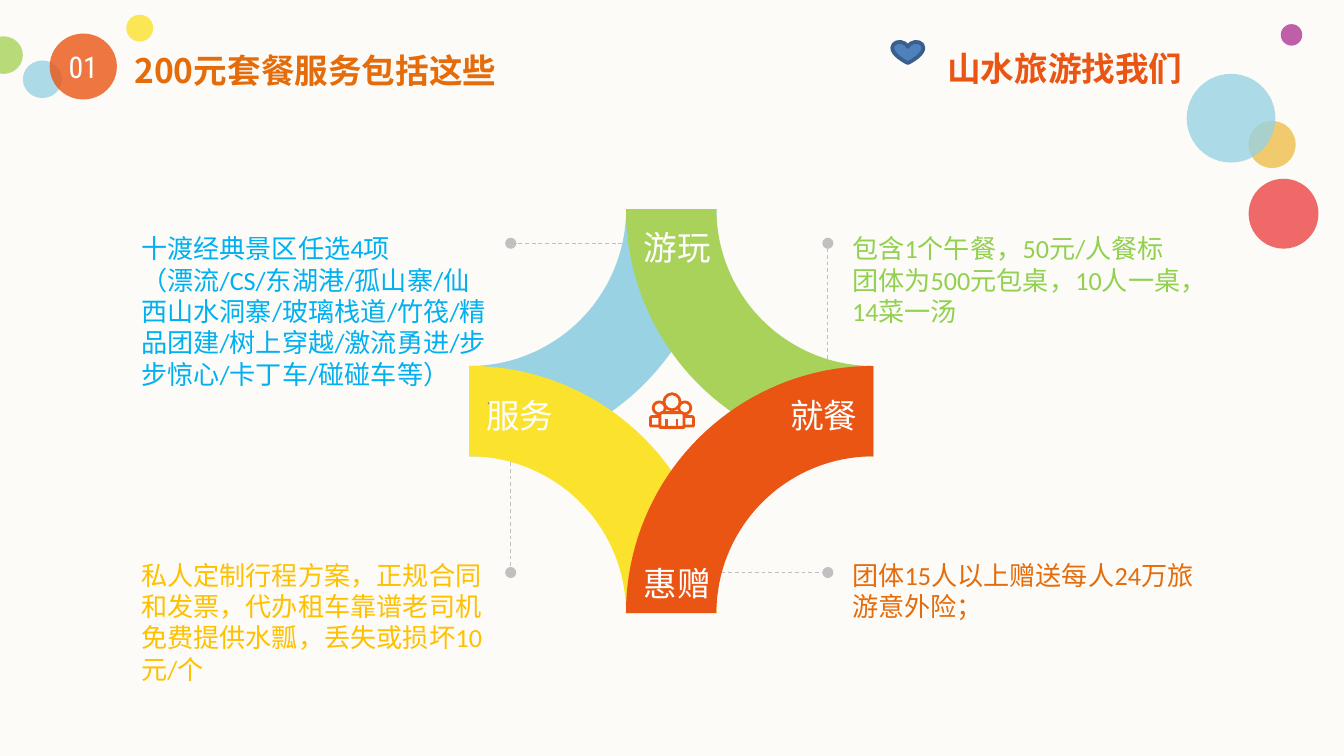
from dataclasses import dataclass
from math import cos, pi, sin

from pptx import Presentation
from pptx.dml.color import RGBColor
from pptx.enum.dml import MSO_LINE
from pptx.enum.shapes import MSO_CONNECTOR, MSO_SHAPE
from pptx.enum.text import MSO_AUTO_SIZE, PP_ALIGN
from pptx.oxml.ns import qn
from pptx.util import Emu, Inches, Pt
from lxml.etree import SubElement

COLS, ROWS = 100, 56.25
HUES = {
    "paper": "FCFBF7", "blue": "98D2E3", "yellow": "FBE22D",
    "green": "A9D25A", "red": "EA5514", "purple": "B03896",
    "sand": "F0CA6C", "rose": "EB4544", "grey": "C0C0C0",
    "white": "FFFFFF", "sky": "00B0F0", "lime": "92D050",
    "amber": "FFC000", "orange": "E46C0A", "dim": "7F7F7F",
    "heart": "4F81BD", "edge": "3A5F8C",
}

deck = Presentation()
deck.slide_width = Inches(10)
deck.slide_height = Inches(5.625)
slide = deck.slides.add_slide(deck.slide_layouts[6])


@dataclass
class Box:
    col: float
    row: float
    wide: float
    high: float


@dataclass
class Petal:
    side: int
    level: int
    hue: str


@dataclass
class Dot:
    box: Box
    hue: str
    alpha: int = 80


@dataclass
class Wire:
    col: float
    row: float
    end_col: float
    end_row: float


@dataclass
class Note:
    box: Box
    hue: str
    lines: list[str]


@dataclass
class Label:
    col: float
    row: float
    word: str


def span(cells: float) -> Emu:
    return Emu(round(deck.slide_width * cells / COLS))


def tint(name: str) -> RGBColor:
    return RGBColor.from_string(HUES[name])


def place(box: Box) -> list[Emu]:
    return [span(n) for n in (box.col, box.row, box.wide, box.high)]


def draw_shape(kind: MSO_SHAPE, box: Box, fill: str, edge: str = "",
               weight: float = 1, alpha: int = 100) -> None:
    shape = slide.shapes.add_shape(kind, *place(box))
    shape.shadow.inherit = False
    shape.fill.solid()
    shape.fill.fore_color.rgb = tint(fill)
    if alpha < 100:
        clr = shape.fill._xPr.find(qn("a:solidFill"))[0]
        SubElement(clr, qn("a:alpha")).set("val", str(alpha * 1000))
    if edge:
        shape.line.color.rgb = tint(edge)
        shape.line.width = Pt(weight)
    else:
        shape.line.fill.background()


def draw_petal(petal: Petal) -> None:
    mid_col, mid_row, half = 49.95, 30.6, 15.03
    outer, inner, steps = 18.4, 11.67, 40

    def point(reach: float, step: int) -> tuple[Emu, Emu]:
        angle = pi / 2 * step / steps
        col = mid_col + petal.side * (half - reach * cos(angle))
        row = mid_row + petal.level * (half - reach * sin(angle))
        return span(col), span(row)

    rim = [point(outer, n) for n in range(steps + 1)]
    rim += [point(inner, n) for n in range(steps, -1, -1)]
    pen = slide.shapes.build_freeform(*rim[0])
    pen.add_line_segments(rim[1:], close=True)
    shape = pen.convert_to_shape()
    shape.shadow.inherit = False
    shape.fill.solid()
    shape.fill.fore_color.rgb = tint(petal.hue)
    shape.line.fill.background()


def draw_wire(wire: Wire, hue: str, weight: float, dotted: bool) -> None:
    ends = (wire.col, wire.row, wire.end_col, wire.end_row)
    line = slide.shapes.add_connector(
        MSO_CONNECTOR.STRAIGHT, *[span(n) for n in ends])
    line.line.color.rgb = tint(hue)
    line.line.width = Pt(weight)
    if dotted:
        line.line.dash_style = MSO_LINE.DASH
        SubElement(line.line._ln, qn("a:tailEnd")).set("type", "oval")
    SubElement(line._element.spPr, qn("a:effectLst"))


def write(box: Box, lines: list[str], *, hue: str, size: float = 14,
          font: str = "Calibri", bold: bool = False, wrap: bool = True,
          align: PP_ALIGN = PP_ALIGN.LEFT, tail: str = "") -> None:
    frame = slide.shapes.add_textbox(*place(box)).text_frame
    frame.word_wrap = wrap
    frame.auto_size = MSO_AUTO_SIZE.SHAPE_TO_FIT_TEXT
    if wrap:
        frame.margin_left = frame.margin_right = 0
        frame.margin_top = frame.margin_bottom = 0
    rows = [(line, hue, size, align) for line in lines]
    if tail:
        rows.append((tail, "dim", 8, PP_ALIGN.RIGHT))
    for n, (line, shade, points, side) in enumerate(rows):
        para = frame.add_paragraph() if n else frame.paragraphs[0]
        para.alignment = side
        run = para.add_run()
        run.text = line
        run.font.name = font
        run.font.size = Pt(points)
        run.font.bold = bold
        run.font.color.rgb = tint(shade)
        east = SubElement(run.font._element, qn("a:ea"))
        east.set("typeface", "Noto Sans CJK JP")


def draw_team() -> None:
    disc, torso = MSO_SHAPE.OVAL, MSO_SHAPE.ROUND_2_SAME_RECTANGLE
    parts = [
        (torso, Box(48.4, 31, 1, 0.7)), (torso, Box(50.6, 31, 1, 0.7)),
        (disc, Box(48.6, 29.9, 0.9, 0.9)), (disc, Box(50.5, 29.9, 0.9, 0.9)),
        (torso, Box(49.1, 30.7, 1.8, 1.1)), (disc, Box(49.4, 29.3, 1.2, 1.2)),
    ]
    for kind, box in parts:
        draw_shape(kind, box, "paper", "red", 1.5)
    for col in (49.6, 50.4):
        draw_wire(Wire(col, 31.2, col, 31.8), "red", 1.2, False)


PETALS = [Petal(-1, -1, "blue"), Petal(-1, 1, "yellow"),
          Petal(1, -1, "green"), Petal(1, 1, "red")]
WIRES = [Wire(46.3, 18.1, 38, 18.1), Wire(38, 34.4, 38, 42.6),
         Wire(53.7, 42.6, 61.6, 42.6), Wire(61.6, 26.7, 61.6, 18.1)]
NOTES = [
    Note(Box(63.4, 17.3, 26, 7.1), "lime",
         ["包含1个午餐，50元/人餐标", "团体为500元包桌，10人一桌，14菜一汤"]),
    Note(Box(63.4, 41.6, 26, 4.7), "orange",
         ["团体15人以上赠送每人24万旅游意外险；"]),
    Note(Box(10.5, 41.6, 26, 9.4), "amber",
         ["私人定制行程方案，正规合同和发票，代办租车靠谱老司机",
          "免费提供水瓢，丢失或损坏10元/个"]),
]
TOUR = Note(Box(10.5, 17.3, 26, 13.1), "sky", [
    "十渡经典景区任选4项",
    "（漂流/CS/东湖港/孤山寨/仙西山水洞寨/玻璃栈道/竹筏/精品团建"
    "/树上穿越/激流勇进/步步惊心/卡丁车/碰碰车等）"])
LABELS = [Label(46.9, 16.4, "游玩"), Label(57.8, 28.9, "就餐"),
          Label(35.2, 28.9, "服务"), Label(46.9, 41.4, "惠赠")]
DOTS = [
    Dot(Box(9.4, 1.1, 2, 2), "yellow"),
    Dot(Box(-1.2, 2.7, 2.9, 2.8), "green"),
    Dot(Box(1.7, 4.5, 2.9, 2.8), "blue"),
    Dot(Box(3.7, 2.5, 5, 4.9), "red"),
    Dot(Box(95.3, 1.8, 1.6, 1.6), "purple"),
    Dot(Box(92.9, 9, 3.5, 3.5), "sand", 100),
    Dot(Box(92.9, 13.3, 5.2, 5.2), "rose"),
    Dot(Box(88.3, 5.5, 6.6, 6.6), "blue"),
]


def main() -> None:
    slide.background.fill.solid()
    slide.background.fill.fore_color.rgb = tint("paper")
    for petal in PETALS:
        draw_petal(petal)
    draw_team()
    for wire in WIRES:
        draw_wire(wire, "grey", 0.5, True)
    for note in NOTES:
        write(note.box, note.lines, hue=note.hue)
    write(TOUR.box, TOUR.lines, hue=TOUR.hue, tail=".")
    for dot in DOTS:
        draw_shape(MSO_SHAPE.OVAL, dot.box, dot.hue, alpha=dot.alpha)
    write(Box(4.4, 3.6, 3.6, 2.7), ["01"], hue="white", size=16,
          font="Roboto Condensed", align=PP_ALIGN.CENTER)
    write(Box(10, 3.7, 30.4, 3), ["200元套餐服务包括这些"], hue="orange",
          size=18, font="Noto Sans CJK JP", bold=True)
    for label in LABELS:
        write(Box(label.col, label.row, 7.1, 4), [label.word],
              hue="white", size=18, wrap=False)
    write(Box(69.5, 3.1, 20.3, 4), ["山水旅游找我们"], hue="red",
          size=18, bold=True, wrap=False)
    draw_shape(MSO_SHAPE.HEART, Box(66.4, 3.1, 2.3, 1.6), "heart", "edge", 2)
    deck.save("out.pptx")


if __name__ == "__main__":
    main()
